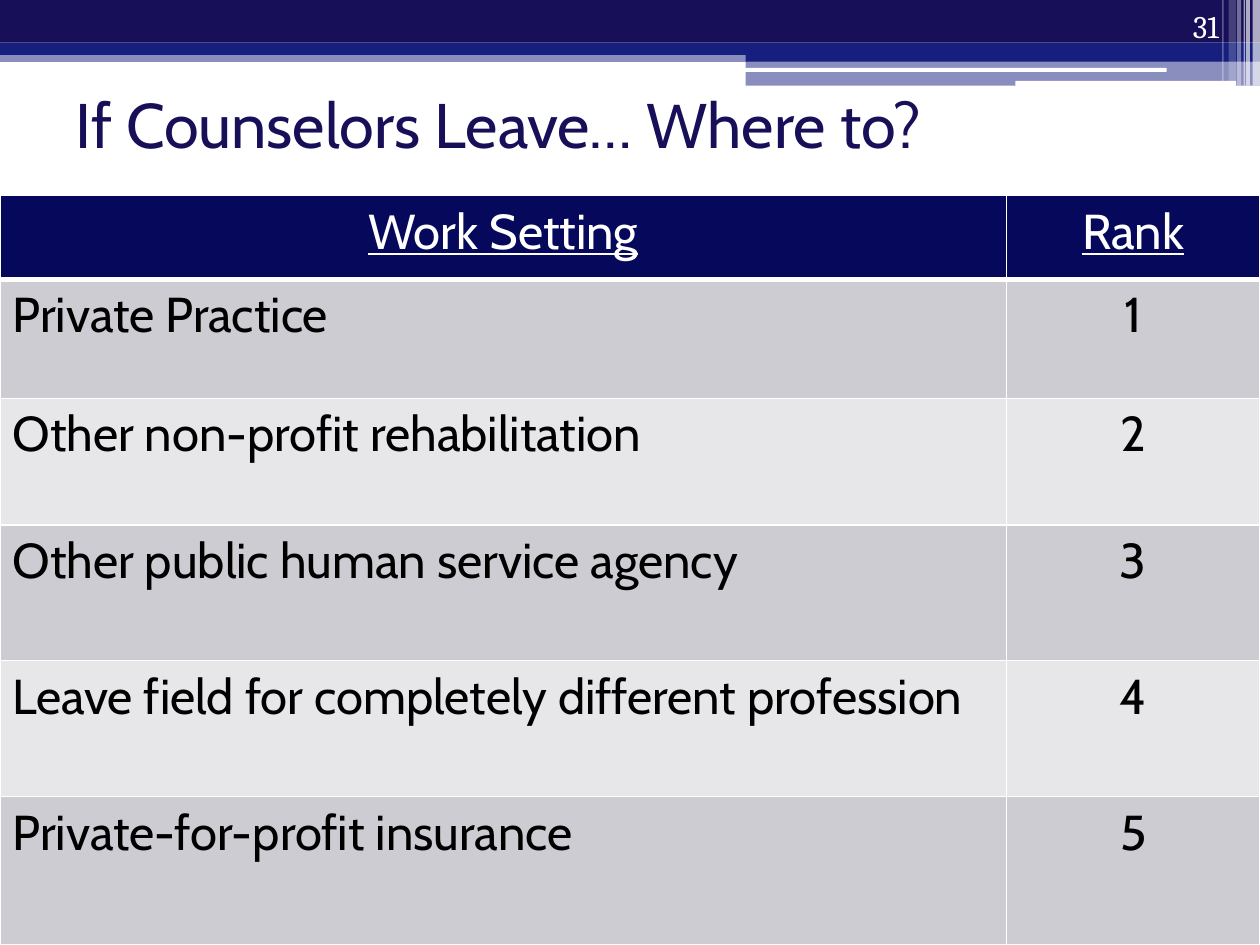
from lxml import etree
from pptx import Presentation
from pptx import util as u
from pptx.dml.color import RGBColor
from pptx.enum import shapes, text
from pptx.oxml import ns

WHITE = RGBColor(0xFF, 0xFF, 0xFF)
BLACK = RGBColor(0, 0, 0)
INDIGO = RGBColor(0x17, 0x10, 0x59)
BLUE = RGBColor(0x16, 0x1E, 0x7E)
NAVY = RGBColor(0x06, 0x08, 0x5B)
GREY = RGBColor(0xCC, 0xCC, 0xD2)
PALE = RGBColor(0xE7, 0xE7, 0xEA)

RECT = shapes.MSO_SHAPE.RECTANGLE
ROUNDED = shapes.MSO_SHAPE.ROUNDED_RECTANGLE

BANDS = [
    (0, 1.02, 25.4, 0.23, BLUE, 50),
    (0, 0, 25.4, 0.86, INDIGO, 100),
    (0, 0.86, 25.4, 0.25, BLUE, 100),
    (15.03, 0.99, 10.37, 0.25, BLUE, 100),
    (15.03, 1.23, 10.37, 0.5, BLUE, 50),
]
HIGHLIGHTS = [(15.01, 1.37, 8.51, 0.08), (20.47, 1.63, 4.45, 0.1)]
STRIPES = [
    (25.25, 0.15, 1.73, 65),
    (25.12, 0.08, 1.73, 65),
    (25.07, 0.03, 1.73, 60),
    (24.94, 0.08, 1.73, 40),
    (24.77, 0.15, 1.63, 20),
    (24.64, 0.03, 1.63, 30),
]
SETTINGS = [
    "Private Practice",
    "Other non-profit rehabilitation",
    "Other public human service agency",
    "Leave field for completely different profession",
    "Private-for-profit insurance",
]
COLUMN_WIDTHS = [20.29, 5.11]
ROW_HEIGHTS = [1.69, 2.4, 2.55, 2.74, 2.74, 2.99]


class SlideBuilder:
    heading_font = "Cabin"
    number_font = "Cambria"

    def __init__(self, page):
        self.page = page

    def style(self, para, size, color, font, align, underline=None):
        para.alignment = align
        for span in para.runs:
            span.font.name = font
            span.font.size = u.Pt(size)
            span.font.color.rgb = color
            span.font.underline = underline

    def bar(self, left, top, width, height, color, opacity=100, kind=RECT):
        box = self.page.shapes.add_shape(
            kind, u.Cm(left), u.Cm(top), u.Cm(width), u.Cm(height))
        box.shadow.inherit = False
        box.line.fill.background()
        box.fill.solid()
        box.fill.fore_color.rgb = color
        if opacity < 100:
            tint = box.fill._xPr.find(".//" + ns.qn("a:srgbClr"))
            etree.SubElement(tint, ns.qn("a:alpha"), val=str(opacity * 1000))

    def title(self, words, left, top, width, height):
        box = self.page.shapes.title
        box.left, box.top = u.Cm(left), u.Cm(top)
        box.width, box.height = u.Cm(width), u.Cm(height)
        frame = box.text_frame
        frame.text = words
        frame.auto_size = text.MSO_AUTO_SIZE.NONE
        frame.vertical_anchor = text.MSO_ANCHOR.MIDDLE
        self.style(frame.paragraphs[0], 36, INDIGO, self.heading_font,
                   text.PP_ALIGN.LEFT)

    def page_number(self, number, left, top, width, height):
        box = self.page.shapes.add_textbox(
            u.Cm(left), u.Cm(top), u.Cm(width), u.Cm(height))
        frame = box.text_frame
        frame.word_wrap = True
        frame.vertical_anchor = text.MSO_ANCHOR.BOTTOM
        frame.text = str(number)
        self.style(frame.paragraphs[0], 18, WHITE, self.number_font,
                   text.PP_ALIGN.RIGHT)

    def borders(self, cell, bottom):
        properties = cell._tc.get_or_add_tcPr()
        sides = [("lnL", 1), ("lnR", 1), ("lnT", 1), ("lnB", bottom)]
        for place, (side, points) in enumerate(sides):
            line = etree.Element(ns.qn("a:" + side), w=str(u.Pt(points)))
            fill = etree.SubElement(line, ns.qn("a:solidFill"))
            etree.SubElement(fill, ns.qn("a:srgbClr"), val=str(WHITE))
            properties.insert(place, line)

    def table(self, rows, left, top, widths, heights):
        grid = self.page.shapes.add_table(
            len(rows), len(widths), u.Cm(left), u.Cm(top),
            u.Cm(sum(widths)), u.Cm(sum(heights))).table
        for column, width in zip(grid.columns, widths):
            column.width = u.Cm(width)
        for r, (row, height) in enumerate(zip(rows, heights)):
            grid.rows[r].height = u.Cm(height)
            header = r == 0
            for c, words in enumerate(row):
                cell = grid.cell(r, c)
                cell.text = words
                cell.fill.solid()
                cell.fill.fore_color.rgb = NAVY if header else (PALE, GREY)[r % 2]
                self.borders(cell, 3 if header else 1)
                centred = header or c == 1
                self.style(cell.text_frame.paragraphs[0], 28,
                           WHITE if header else BLACK, self.heading_font,
                           text.PP_ALIGN.CENTER if centred else text.PP_ALIGN.LEFT,
                           header)
                for span in cell.text_frame.paragraphs[0].runs:
                    span.font.bold = False


def main():
    deck = Presentation()
    deck.slide_width, deck.slide_height = u.Cm(25.4), u.Cm(19.05)
    builder = SlideBuilder(deck.slides.add_slide(deck.slide_layouts[5]))
    for band in BANDS:
        builder.bar(*band)
    for highlight in HIGHLIGHTS:
        builder.bar(*highlight, WHITE, kind=ROUNDED)
    for left, width, height, opacity in STRIPES:
        builder.bar(left, 0, width, height, WHITE, opacity)
    builder.title("If Counselors Leave… Where to?", 1.27, 1.83, 22.86, 1.3)
    ranks = [(name, str(rank)) for rank, name in enumerate(SETTINGS, 1)]
    builder.table([("Work Setting", "Rank")] + ranks, 0, 3.94,
                  COLUMN_WIDTHS, ROW_HEIGHTS)
    builder.page_number(31, 22.71, 0, 2.11, 1.02)
    deck.save("out.pptx")


if __name__ == "__main__":
    main()
